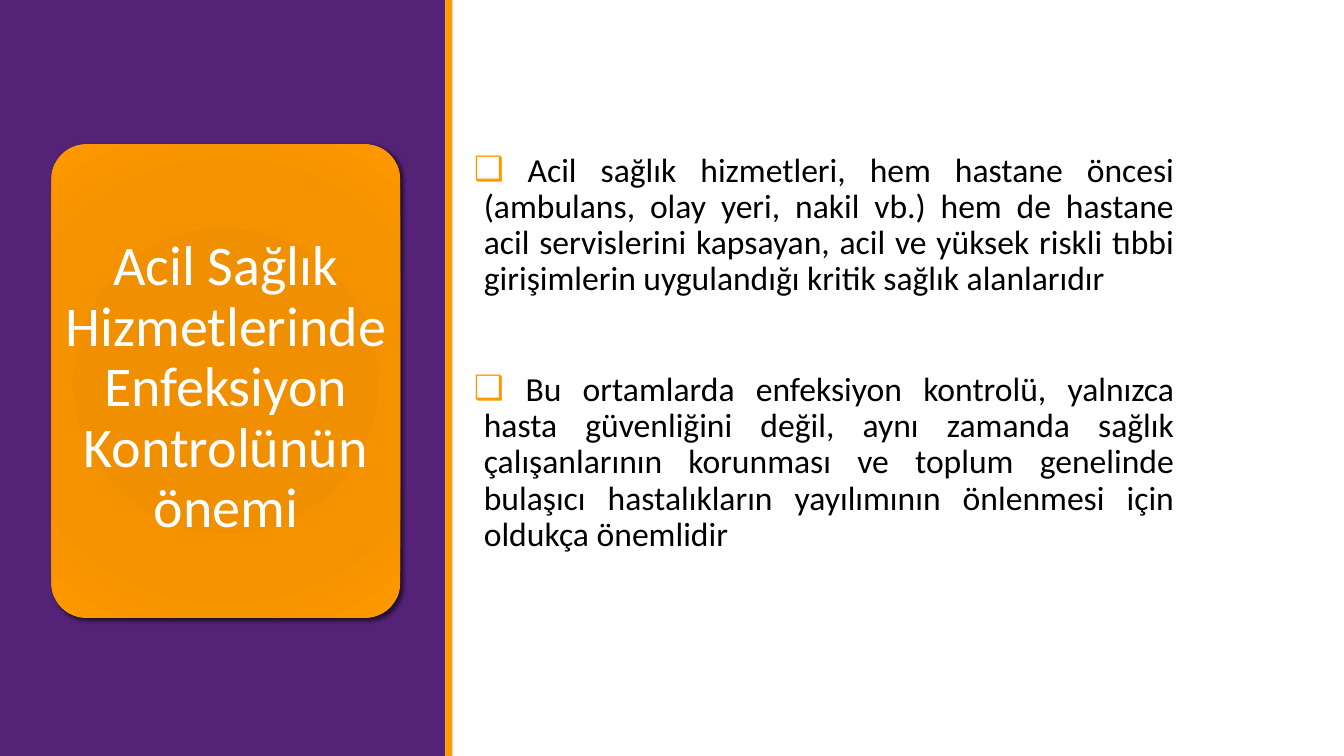
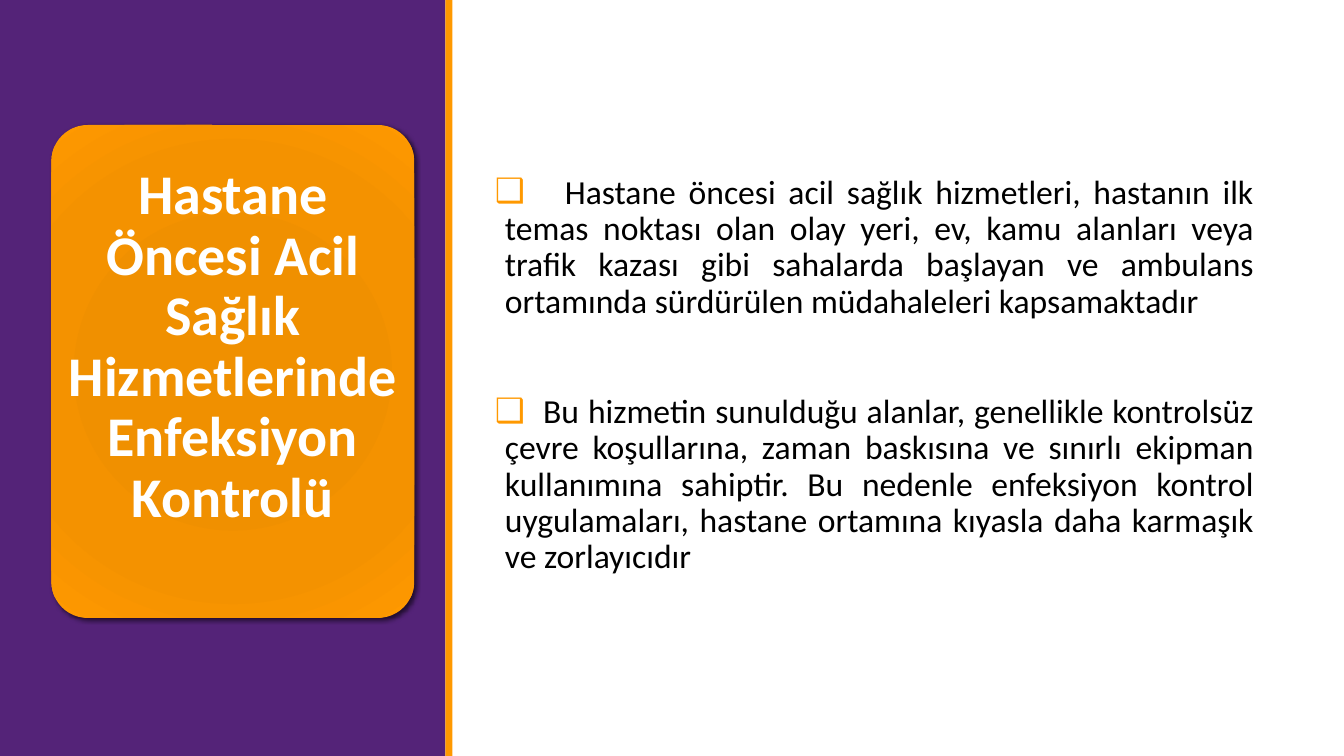
from lxml import etree
from pptx import Presentation
from pptx.dml.color import RGBColor
from pptx.enum.shapes import MSO_SHAPE
from pptx.enum.text import MSO_ANCHOR, PP_ALIGN
from pptx.oxml.ns import qn
from pptx.util import Pt

RECT, ROUNDED = MSO_SHAPE.RECTANGLE, MSO_SHAPE.ROUNDED_RECTANGLE
TOP = MSO_ANCHOR.TOP
CENTER, JUSTIFY = PP_ALIGN.CENTER, PP_ALIGN.JUSTIFY

# Content: boxes are left, top, width, height in points
SLIDES = [
    {
        "title": "Acil Sağlık Hizmetlerinde Enfeksiyon Kontrolünün önemi",
        "bold": False,
        "card": (36.7, 103, 249.1, 338.4),
        "title_top": 169.5,
        "body": (338.4, 105.8, 500.4, 362.9),
        # each point: text, start of its first line
        "points": [
            ("Acil sağlık hizmetleri, hem hastane öncesi (ambulans, olay yeri, "
             "nakil vb.) hem de hastane acil servislerini kapsayan, acil ve "
             "yüksek riskli tıbbi girişimlerin uygulandığı kritik sağlık "
             "alanlarıdır", 38.5),
            ("Bu ortamlarda enfeksiyon kontrolü, yalnızca hasta güvenliğini "
             "değil, aynı zamanda sağlık çalışanlarının korunması ve toplum "
             "genelinde bulaşıcı hastalıkların yayılımının önlenmesi için "
             "oldukça önemlidir", 37),
        ],
    },
    {
        "title": "Hastane Öncesi Acil Sağlık Hizmetlerinde Enfeksiyon Kontrolü",
        "bold": True,
        "card": (36.7, 89.3, 259.2, 352.1),
        "title_top": 119,
        "body": (353.5, 121.7, 542.2, 351.4),
        "points": [
            ("Hastane öncesi acil sağlık hizmetleri, hastanın ilk temas "
             "noktası olan olay yeri, ev, kamu alanları veya trafik kazası "
             "gibi sahalarda başlayan ve ambulans ortamında sürdürülen "
             "müdahaleleri kapsamaktadır", 50),
            ("Bu hizmetin sunulduğu alanlar, genellikle kontrolsüz çevre "
             "koşullarına, zaman baskısına ve sınırlı ekipman kullanımına "
             "sahiptir. Bu nedenle enfeksiyon kontrol uygulamaları, hastane "
             "ortamına kıyasla daha karmaşık ve zorlayıcıdır", 34.5),
        ],
    },
]

# Shared style
COLORS = {"purple": "542378", "orange": "FF9900", "white": "FFFFFF",
          "black": "000000"}
CARD_STOPS = [(0, "EE8F00"), (34, "F09000"), (70, "F49200"), (100, "FF9900")]
FONT = "Calibri"
SLIDE_W, SLIDE_H = 960, 540
BAND_W, STRIPE_W = 318.2, 5
CARD_INSET = 7.3
HANG = 7.2
POINT_GAP = 53


def child(parent, tag, **attributes):
    return etree.SubElement(parent, qn(tag),
                            {key: str(value) for key, value in attributes.items()})


def add_panel(slide, kind, box, color):
    panel = slide.shapes.add_shape(kind, *map(Pt, box))
    panel.fill.solid()
    panel.fill.fore_color.rgb = RGBColor.from_string(color)
    panel.line.fill.background()
    panel.shadow.inherit = False
    return panel


def add_card(slide, box):
    card = add_panel(slide, ROUNDED, box, COLORS["orange"])
    card.adjustments[0] = 0.1
    properties = card._element.spPr
    # Radial gradient
    gradient = etree.Element(qn("a:gradFill"), rotWithShape="1")
    stops = child(gradient, "a:gsLst")
    for position, color in CARD_STOPS:
        child(child(stops, "a:gs", pos=position * 1000), "a:srgbClr", val=color)
    circle = child(gradient, "a:path", path="circle")
    child(circle, "a:fillToRect", l=100000, t=100000, r=100000, b=100000)
    properties.replace(properties.find(qn("a:solidFill")), gradient)
    # Soft shadow
    shadow = child(properties.find(qn("a:effectLst")), "a:outerShdw",
                   blurRad=Pt(3), dist=Pt(2), dir=45 * 60000, rotWithShape=0)
    child(child(shadow, "a:srgbClr", val=COLORS["black"]), "a:alpha", val=60000)


def add_bullet(paragraph, text_start):
    properties = paragraph._p.get_or_add_pPr()
    properties.set("marL", str(Pt(HANG)))
    properties.set("indent", str(-Pt(HANG)))
    child(child(properties, "a:buClr"), "a:srgbClr", val=COLORS["orange"])
    child(properties, "a:buFont", typeface=FONT)
    child(properties, "a:buChar", char="❑")
    child(child(properties, "a:tabLst"), "a:tab", pos=Pt(text_start), algn="l")


def add_text(slide, box, points, *, size, color, align, bold=False,
             insets=(0, 0), gap=0):
    frame = slide.shapes.add_textbox(*map(Pt, box)).text_frame
    frame.word_wrap = True
    frame.vertical_anchor = TOP
    frame.margin_left = frame.margin_right = Pt(insets[0])
    frame.margin_top = frame.margin_bottom = Pt(insets[1])
    for index, (text, text_start) in enumerate(points):
        paragraph = frame.paragraphs[0] if index == 0 else frame.add_paragraph()
        paragraph.alignment = align
        paragraph.line_spacing = 0.9
        if index:
            paragraph.space_before = Pt(gap)
        if text_start:
            add_bullet(paragraph, text_start)
            text = "\t" + text
        run = paragraph.add_run()
        run.text = text
        run.font.name = FONT
        run.font.size = Pt(size)
        run.font.bold = bold
        run.font.color.rgb = RGBColor.from_string(color)


def build_slide(deck, content):
    slide = deck.slides.add_slide(deck.slide_layouts[6])
    # Side band and stripe
    add_panel(slide, RECT, (0, 0, BAND_W, SLIDE_H), COLORS["purple"])
    add_panel(slide, RECT, (BAND_W, 0, STRIPE_W, SLIDE_H), COLORS["orange"])
    # Title card
    left, top, width, height = content["card"]
    add_card(slide, content["card"])
    title_box = (left + CARD_INSET, content["title_top"], width - 2 * CARD_INSET,
                 top + height - CARD_INSET - content["title_top"])
    add_text(slide, title_box, [(content["title"], None)], size=40,
             color=COLORS["white"], align=CENTER, bold=content["bold"],
             insets=(2, 0))
    # Points
    add_text(slide, content["body"], content["points"], size=24,
             color=COLORS["black"], align=JUSTIFY, insets=(0, 3.6),
             gap=POINT_GAP)


def main():
    deck = Presentation()
    deck.slide_width, deck.slide_height = Pt(SLIDE_W), Pt(SLIDE_H)
    for content in SLIDES:
        build_slide(deck, content)
    deck.save("out.pptx")


if __name__ == "__main__":
    main()
